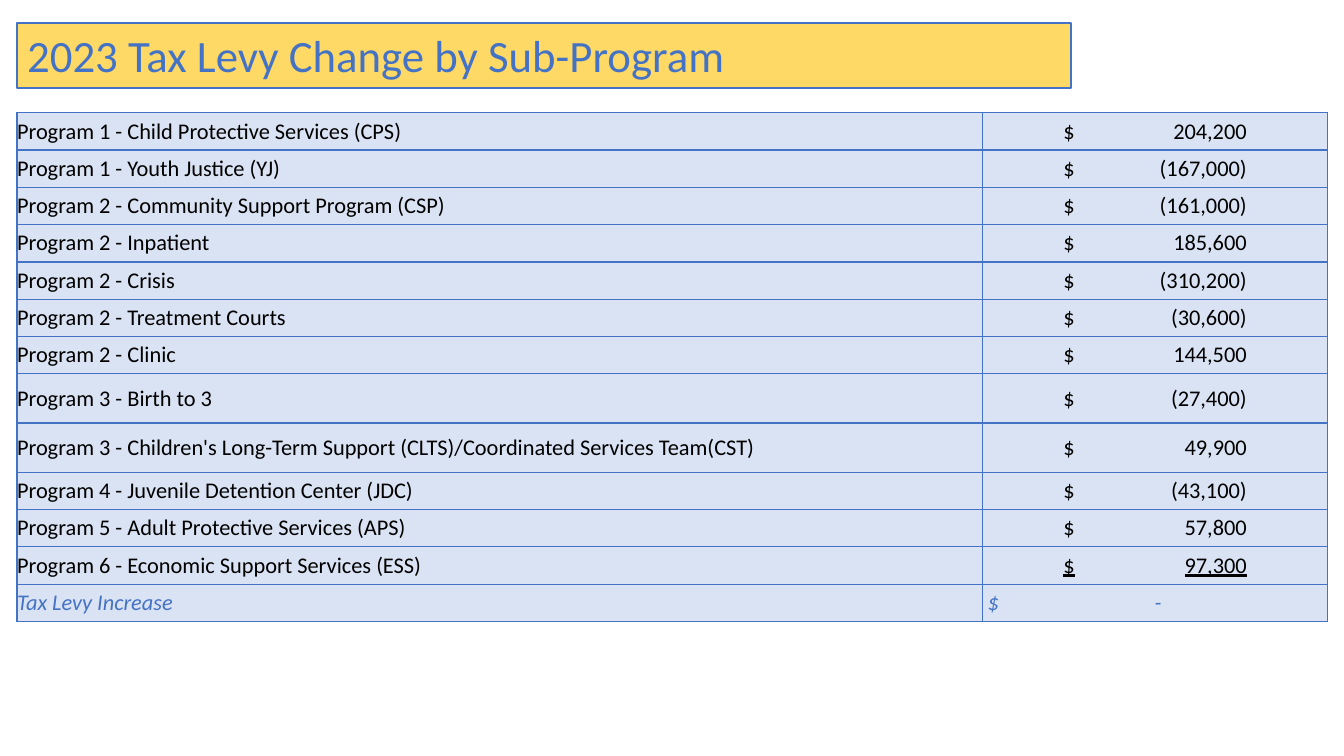
from dataclasses import dataclass

from lxml.etree import SubElement
from pptx import Presentation
from pptx.dml.color import RGBColor as RGB
from pptx.enum.text import MSO_ANCHOR as Anchor, MSO_AUTO_SIZE as Fit, PP_ALIGN as Align
from pptx.oxml import parse_xml
from pptx.oxml.ns import nsdecls, qn
from pptx.util import Cm, Pt

BLUE, GOLD, PALE, BLACK = "4472C4", "FFD966", "DAE3F3", "000000"
PLAIN = "{2D5ABB26-0587-4C30-8999-92F81FD0307C}"


@dataclass
class Levy:
    name: str
    value: str
    height: float = 0.94
    color: str = BLACK
    total: bool = False
    under: bool = False
    inset: float = 2.04
    stop: float = 4.62


LEVIES = [
    Levy("Program 1 - Child Protective Services (CPS)", "204,200"),
    Levy("Program 1 - Youth Justice (YJ)", "(167,000)"),
    Levy("Program 2 - Community Support Program (CSP)", "(161,000)"),
    Levy("Program 2 - Inpatient", "185,600"),
    Levy("Program 2 - Crisis", "(310,200)"),
    Levy("Program 2 - Treatment Courts", "(30,600)"),
    Levy("Program 2 - Clinic", "144,500"),
    Levy("Program 3 - Birth to 3", "(27,400)", height=1.24),
    Levy("Program 3 - Children's Long-Term Support (CLTS)/Coordinated Services Team(CST)",
         "49,900", height=1.24),
    Levy("Program 4 - Juvenile Detention Center (JDC)", "(43,100)"),
    Levy("Program 5 - Adult Protective Services (APS)", "57,800"),
    Levy("Program 6 - Economic Support Services (ESS)", "97,300", under=True),
    Levy("Tax Levy Increase", "-", color=BLUE, total=True, inset=0.13, stop=4.38),
]


def paint(fill, color: str) -> None:
    fill.solid()
    fill.fore_color.rgb = RGB.from_string(color)


def style(font, size: float, color: str) -> None:
    font.name = "Calibri"
    font.size = Pt(size)
    paint(font.fill, color)


def border(cell) -> None:
    props = cell._tc.get_or_add_tcPr()
    for spot, side in enumerate(("lnL", "lnR", "lnT", "lnB")):
        props.insert(spot, parse_xml(
            f'<a:{side} {nsdecls("a")} w="{Pt(1)}"><a:solidFill>'
            f'<a:srgbClr val="{BLUE}"/></a:solidFill></a:{side}>'))


def write(cell, text: str, levy: Levy, inset: float = 0):
    cell.margin_left = Cm(inset)
    cell.margin_right = cell.margin_top = cell.margin_bottom = 0
    cell.vertical_anchor = Anchor.MIDDLE
    paint(cell.fill, PALE)
    border(cell)
    para = cell.text_frame.paragraphs[0]
    para.text = text
    style(para.font, 16, levy.color)
    para.font.italic = levy.total
    return para


def add_stop(para, place: float) -> None:
    props = para._p.get_or_add_pPr()
    tabs = SubElement(props, qn("a:tabLst"))
    SubElement(tabs, qn("a:tab"), pos=str(Cm(place)), algn="r")
    props.insert(0, tabs)


def add_title(slide) -> None:
    title = slide.shapes.title
    title.left, title.top, title.width, title.height = Cm(0.43), Cm(0.58), Cm(26.57), Cm(1.63)
    paint(title.fill, GOLD)
    paint(title.line.fill, BLUE)
    title.line.width = Pt(1.5)
    frame = title.text_frame
    frame.text = "2023 Tax Levy Change by Sub-Program"
    frame.auto_size = Fit.NONE
    frame.word_wrap = True
    frame.vertical_anchor = Anchor.BOTTOM
    para = frame.paragraphs[0]
    para.alignment = Align.LEFT
    para.line_spacing = 0.9
    style(para.font, 32, BLUE)


def add_grid(slide) -> None:
    high = sum(levy.height for levy in LEVIES)
    frame = slide.shapes.add_table(len(LEVIES), 2, Cm(0.43), Cm(2.84), Cm(33.02), Cm(high))
    grid = frame.table
    grid.first_row = grid.horz_banding = False
    grid._tbl.tblPr.find(qn("a:tableStyleId")).text = PLAIN
    for column, width in zip(grid.columns, (24.33, 8.69)):
        column.width = Cm(width)
    for spot, levy in enumerate(LEVIES):
        grid.rows[spot].height = Cm(levy.height)
        write(grid.cell(spot, 0), levy.name, levy)
        para = write(grid.cell(spot, 1), f"$\t{levy.value}", levy, levy.inset)
        para.font.underline = levy.under
        add_stop(para, levy.stop)


def main() -> None:
    deck = Presentation()
    deck.slide_width, deck.slide_height = Cm(33.87), Cm(19.05)
    slide = deck.slides.add_slide(deck.slide_layouts[5])
    add_title(slide)
    add_grid(slide)
    deck.save("out.pptx")


if __name__ == "__main__":
    main()
